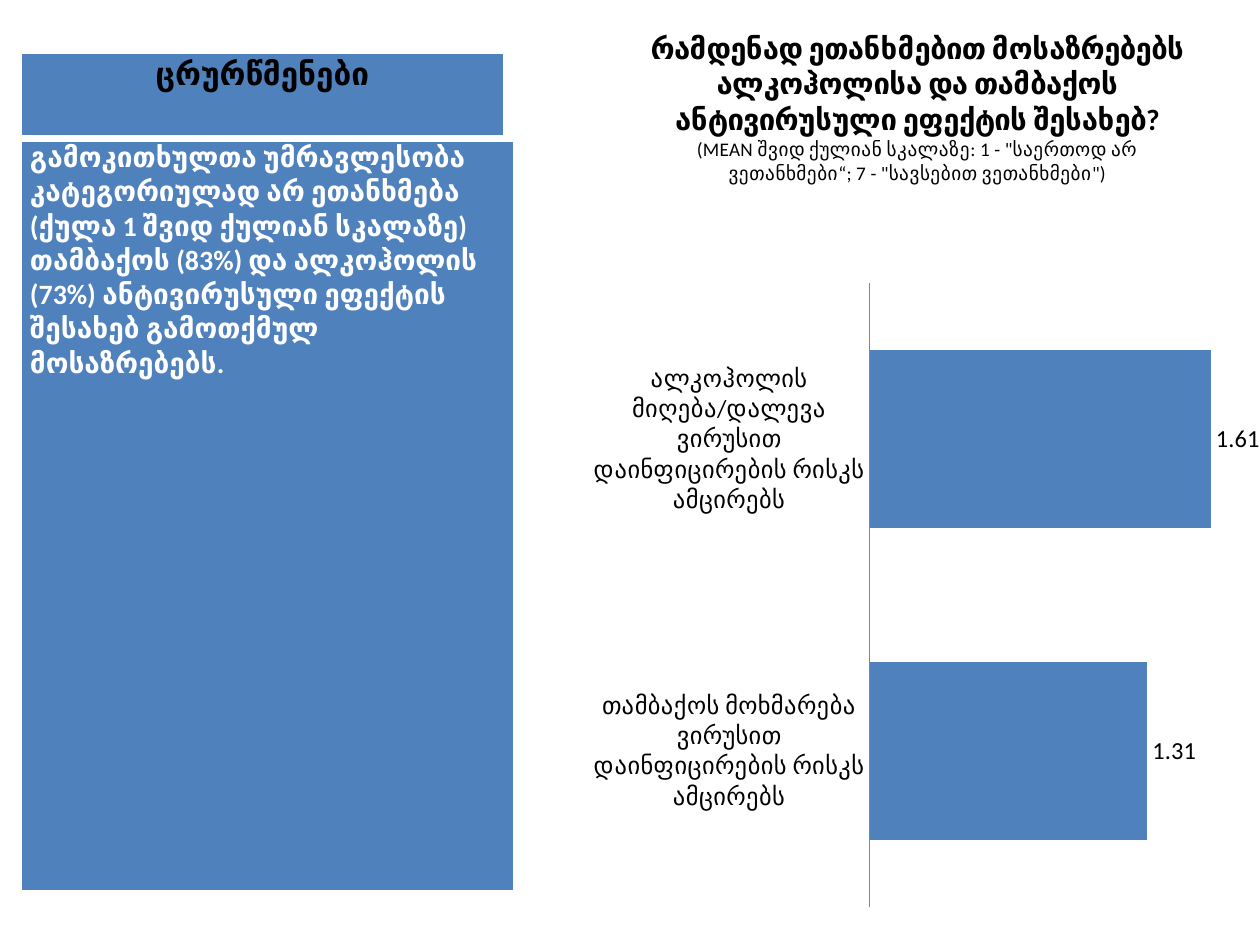
from dataclasses import dataclass

from lxml import etree
from pptx import Presentation
from pptx import util as u
from pptx.chart.data import CategoryChartData
from pptx.dml.color import RGBColor
from pptx.enum import chart as ch
from pptx.enum import text
from pptx.oxml import ns

PX = 914400 / 126
FONT = "Calibri"
BLUE, BLACK, WHITE, GRAY = "4F81BD", "000000", "FFFFFF", "868686"


@dataclass
class Panel:
    x: int
    y: int
    w: int
    h: int
    words: str
    size: int
    color: str
    align: text.PP_ALIGN
    spacing: float


PANELS = [
    Panel(21, 53, 483, 84, "ცრურწმენები", 18, BLACK, text.PP_ALIGN.CENTER, 1.07),
    Panel(21, 141, 493, 751,
          "გამოკითხულთა უმრავლესობა კატეგორიულად არ ეთანხმება (ქულა 1 შვიდ "
          "ქულიან სკალაზე) თამბაქოს (83%) და ალკოჰოლის (73%) ანტივირუსული "
          "ეფექტის შესახებ გამოთქმულ მოსაზრებებს.",
          16, WHITE, text.PP_ALIGN.LEFT, 1.0),
]
MEANS = {
    "ალკოჰოლის მიღება/დალევა ვირუსით დაინფიცირების რისკს ამცირებს": 1.61,
    "თამბაქოს მოხმარება ვირუსით დაინფიცირების რისკს ამცირებს": 1.31,
}
# Chart title: wording, size, bold
TITLE = [
    ("რამდენად ეთანხმებით მოსაზრებებს ალკოჰოლისა და თამბაქოს "
     "ანტივირუსული ეფექტის შესახებ?", 16.8, True),
    ("(MEAN შვიდ ქულიან სკალაზე: 1 - \"საერთოდ არ ვეთანხმები“; "
     "7 - \"სავსებით ვეთანხმები\")", 11, False),
]


def px(n: float) -> int:
    return round(n * PX)


def rgb(color: str) -> RGBColor:
    return RGBColor.from_string(color)


def style(font, size: float, color: str, bold: bool = False) -> None:
    font.name, font.size, font.bold = FONT, u.Pt(size), bold
    font.color.rgb = rgb(color)


def add_borders(cell) -> None:
    tc_pr = cell._tc.get_or_add_tcPr()
    for i, (side, width) in enumerate([("L", 1), ("R", 1), ("T", 1), ("B", 3)]):
        ln = etree.Element(ns.qn(f"a:ln{side}"), w=str(u.Pt(width)))
        fill = etree.SubElement(ln, ns.qn("a:solidFill"))
        etree.SubElement(fill, ns.qn("a:srgbClr"), val=WHITE)
        tc_pr.insert(i, ln)


def add_panel(s, panel: Panel) -> None:
    tbl = s.shapes.add_table(1, 1, px(panel.x), px(panel.y),
                             px(panel.w), px(panel.h)).table
    tbl.first_row = tbl.horz_banding = False
    cell = tbl.cell(0, 0)
    cell.fill.solid()
    cell.fill.fore_color.rgb = rgb(BLUE)
    cell.margin_left = cell.margin_right = px(9)
    cell.margin_top = cell.margin_bottom = 0
    add_borders(cell)
    p = cell.text_frame.paragraphs[0]
    p.text = panel.words
    p.alignment, p.line_spacing = panel.align, panel.spacing
    style(p.runs[0].font, panel.size, panel.color, True)


def set_plot_area(chart, x: float, y: float, w: float, h: float) -> None:
    area = chart._chartSpace.chart.plotArea
    for old in area.findall(ns.qn("c:layout")):
        area.remove(old)
    layout = etree.Element(ns.qn("c:layout"))
    manual = etree.SubElement(layout, ns.qn("c:manualLayout"))
    for tag, val in [("layoutTarget", "inner"), ("xMode", "edge"),
                     ("yMode", "edge"), ("x", x), ("y", y), ("w", w), ("h", h)]:
        etree.SubElement(manual, ns.qn(f"c:{tag}"), val=str(val))
    area.insert(0, layout)


def add_means_chart(s) -> None:
    data = CategoryChartData(number_format="###0.00")
    data.categories = list(MEANS)
    data.add_series("Series 1", list(MEANS.values()))
    chart = s.shapes.add_chart(ch.XL_CHART_TYPE.BAR_CLUSTERED, px(577), 0,
                               px(683), px(945), data).chart
    style(chart.font, 14, BLACK)
    chart.has_legend = False

    # Title
    tf = chart.chart_title.text_frame
    tf.text = "\n".join(words for words, _, _ in TITLE)
    for p, (_, size, bold) in zip(tf.paragraphs, TITLE):
        style(p.runs[0].font, size, BLACK, bold)
    chart.chart_title.include_in_layout = False

    # Axes
    cat, val = chart.category_axis, chart.value_axis
    cat.reverse_order = True
    cat.format.line.color.rgb = rgb(GRAY)
    val.minimum_scale, val.maximum_scale = 0, 1.83
    val.has_major_gridlines = False
    val.tick_label_position = ch.XL_TICK_LABEL_POSITION.NONE
    val.format.line.fill.background()
    for axis in (cat, val):
        axis.major_tick_mark = axis.minor_tick_mark = ch.XL_TICK_MARK.NONE

    # Bars and value labels
    plot = chart.plots[0]
    plot.gap_width, plot.overlap, plot.vary_by_categories = 75, -25, False
    fill = plot.series[0].format.fill
    fill.solid()
    fill.fore_color.rgb = rgb(BLUE)
    plot.has_data_labels = True
    labels = plot.data_labels
    labels.show_value = True
    labels.number_format, labels.number_format_is_linked = "###0.00", False
    labels.position = ch.XL_LABEL_POSITION.OUTSIDE_END
    style(labels.font, 14, BLACK)
    set_plot_area(chart, 0.43, 0.3, 0.57, 0.66)


def main() -> None:
    prs = Presentation()
    prs.slide_width, prs.slide_height = px(1260), px(945)
    s = prs.slides.add_slide(prs.slide_layouts[6])
    add_means_chart(s)
    for panel in PANELS:
        add_panel(s, panel)
    prs.save("out.pptx")


if __name__ == "__main__":
    main()
